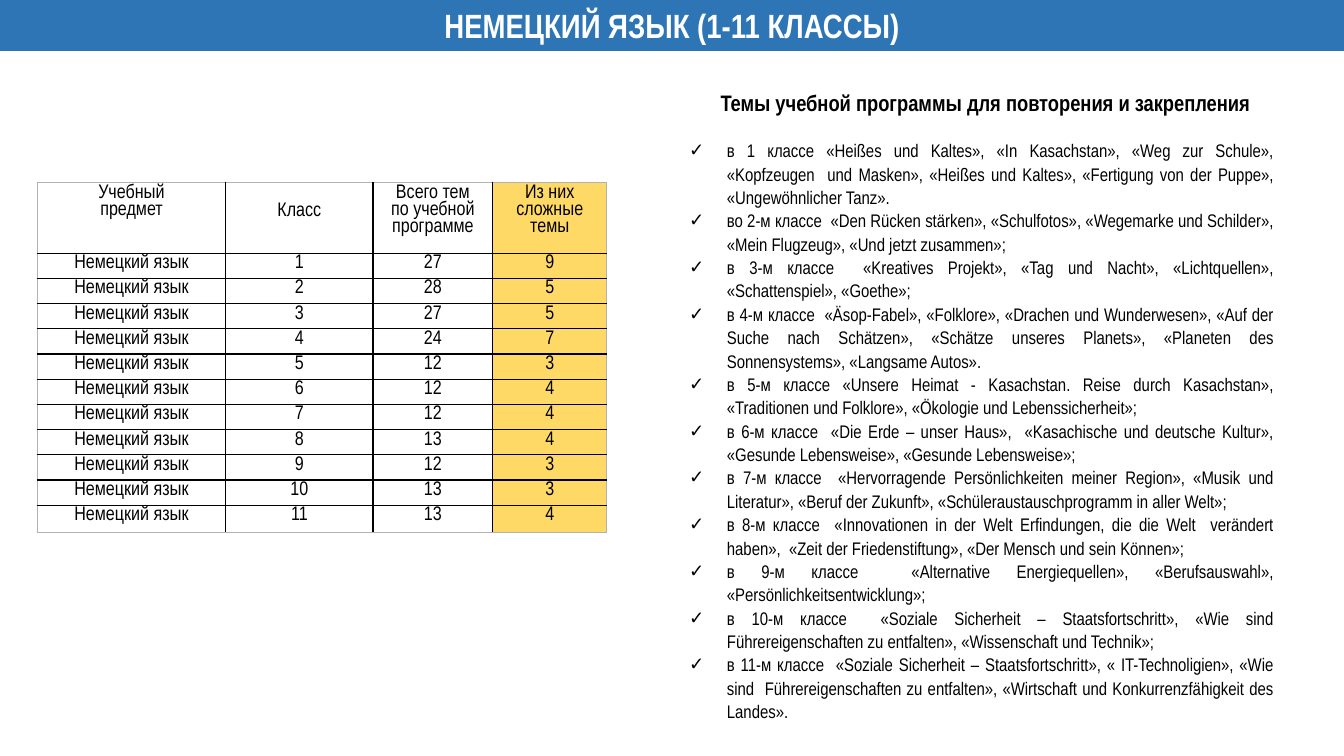
from dataclasses import dataclass

from lxml import etree
from pptx import Presentation
from pptx import util as u
from pptx.dml.color import RGBColor
from pptx.enum import text
from pptx.oxml.ns import qn


@dataclass(frozen=True)
class Theme:
    font: str = "Arial Narrow"
    blue: str = "2E75B6"
    yellow: str = "FFD966"
    white: str = "FFFFFF"
    black: str = "000000"
    grey: str = "B2B2B2"
    title_size: float = 24
    heading_size: float = 16
    table_size: float = 14
    topic_size: float = 13
    line_spacing: float = 1.07
    header_spacing: float = 0.93


TITLE = "НЕМЕЦКИЙ ЯЗЫК (1-11 КЛАССЫ)"
HEADING = "Темы учебной программы для повторения и закрепления"
TOPICS = [
    "в 1 классе «Heißes und Kaltes», «In Kasachstan», «Weg zur Schule», «Kopfzeugen  und Masken», "
    "«Heißes und Kaltes», «Fertigung von der Puppe», «Ungewöhnlicher Tanz».",
    "во 2-м классе  «Den Rücken stärken», «Schulfotos», «Wegemarke und Schilder», «Mein Flugzeug», "
    "«Und jetzt zusammen»;",
    "в 3-м классе  «Kreatives Projekt», «Tag und Nacht», «Lichtquellen», «Schattenspiel», «Goethe»;",
    "в 4-м классе  «Äsop-Fabel», «Folklore», «Drachen und Wunderwesen», «Auf der Suche nach Schätzen», "
    "«Schätze unseres Planets», «Planeten des Sonnensystems», «Langsame Autos».",
    "в 5-м классе «Unsere Heimat - Kasachstan. Reise durch Kasachstan», «Traditionen und Folklore», "
    "«Ökologie und Lebenssicherheit»;",
    "в 6-м классе  «Die Erde – unser Haus»,  «Kasachische und deutsche Kultur», «Gesunde Lebensweise», "
    "«Gesunde Lebensweise»;",
    "в 7-м классе  «Hervorragende Persönlichkeiten meiner Region», «Musik und Literatur», "
    "«Beruf der Zukunft», «Schüleraustauschprogramm in aller Welt»;",
    "в 8-м классе  «Innovationen in der Welt Erfindungen, die die Welt  verändert haben»,  "
    "«Zeit der Friedenstiftung», «Der Mensch und sein Können»;",
    "в 9-м классе  «Alternative Energiequellen», «Berufsauswahl», «Persönlichkeitsentwicklung»;",
    "в 10-м классе  «Soziale Sicherheit – Staatsfortschritt», «Wie sind Führereigenschaften zu entfalten», "
    "«Wissenschaft und Technik»;",
    "в 11-м классе  «Soziale Sicherheit – Staatsfortschritt», « IT-Technoligien», "
    "«Wie sind  Führereigenschaften zu entfalten», «Wirtschaft und Konkurrenzfähigkeit des Landes».",
]
SUBJECT = "Немецкий язык"
HEADERS = ["Учебный\nпредмет", "Класс", "Всего тем\nпо учебной программе", "Из них\nсложные темы"]
TOTAL_TOPICS = [27, 28, 27, 24, 12, 12, 12, 13, 12, 13, 13]
HARD_TOPICS = [9, 5, 5, 7, 3, 4, 4, 4, 3, 3, 4]
COLUMN_WIDTHS = [4.75, 3.71, 3.02, 2.87]
HEADER_HEIGHT, ROW_HEIGHT, LAST_ROW_HEIGHT = 1.78, 0.63, 0.69


class SlideBuilder:
    def __init__(self, presentation, theme):
        self.theme = theme
        self.slide = presentation.slides.add_slide(presentation.slide_layouts[5])

    def style(self, paragraph, size, alignment, color=None, bold=False):
        paragraph.alignment = alignment
        for run in paragraph.runs:
            run.font.name = self.theme.font
            run.font.size = u.Pt(size)
            run.font.bold = bold
            run.font.color.rgb = RGBColor.from_string(color or self.theme.black)

    def title_bar(self, caption, width, height):
        title = self.slide.shapes.title
        title.left, title.top, title.width, title.height = 0, 0, width, height
        title.fill.solid()
        title.fill.fore_color.rgb = RGBColor.from_string(self.theme.blue)
        frame = title.text_frame
        frame.text = caption
        frame.auto_size = text.MSO_AUTO_SIZE.NONE
        frame.vertical_anchor = text.MSO_ANCHOR.MIDDLE
        self.style(frame.paragraphs[0], self.theme.title_size, text.PP_ALIGN.CENTER,
                   self.theme.white, bold=True)

    def topic_list(self, heading, topics, left, top, width, height):
        frame = self.slide.shapes.add_textbox(left, top, width, height).text_frame
        frame.word_wrap = True
        frame.text = "\n".join([heading, *topics])
        first, *items = frame.paragraphs
        self.style(first, self.theme.heading_size, text.PP_ALIGN.JUSTIFY, bold=True)
        first.space_after = u.Pt(15.5)
        self.indent(first, u.Cm(0.79))
        for paragraph in items:
            self.style(paragraph, self.theme.topic_size, text.PP_ALIGN.JUSTIFY)
            paragraph.line_spacing = self.theme.line_spacing
            self.check_bullet(paragraph)

    def indent(self, paragraph, left, first_line=0):
        properties = paragraph._p.get_or_add_pPr()
        properties.set("marL", str(left))
        properties.set("indent", str(first_line))
        return properties

    def check_bullet(self, paragraph):
        properties = self.indent(paragraph, u.Cm(0.95), -u.Cm(0.95))
        etree.SubElement(properties, qn("a:buFont"), typeface="Arial")
        etree.SubElement(properties, qn("a:buChar"), char="✓")

    def table(self, rows, widths, heights, left, top):
        shape = self.slide.shapes.add_table(len(rows), len(widths), left, top,
                                            u.Cm(sum(widths)), u.Cm(sum(heights)))
        table = shape.table
        table.first_row = table.horz_banding = False
        for column, width in zip(table.columns, widths):
            column.width = u.Cm(width)
        for row, height in zip(table.rows, heights):
            row.height = u.Cm(height)
        last_row, last_column = len(rows) - 1, len(widths) - 1
        for row_index, values in enumerate(rows):
            for column_index, value in enumerate(values):
                cell = table.cell(row_index, column_index)
                self.fill_cell(cell, value, is_header=row_index == 0)
                self.borders(cell, lnL=column_index == 0, lnR=column_index == last_column,
                             lnT=row_index == 0, lnB=row_index == last_row)
                if column_index == last_column:
                    cell.fill.solid()
                    cell.fill.fore_color.rgb = RGBColor.from_string(self.theme.yellow)
                else:
                    cell.fill.background()

    def fill_cell(self, cell, value, is_header):
        cell.text = value
        cell.margin_left = cell.margin_right = u.Cm(0.1 if is_header else 0.18)
        cell.margin_top = cell.margin_bottom = 0
        if is_header:
            # A one-line header sits level with the second line of its neighbours.
            cell.margin_top = u.Cm(0.05 if "\n" in value else 0.5)
        for paragraph in cell.text_frame.paragraphs:
            self.style(paragraph, self.theme.table_size, text.PP_ALIGN.CENTER)
            paragraph.line_spacing = self.theme.header_spacing if is_header else self.theme.line_spacing

    def borders(self, cell, **outer_sides):
        """Draw inner sides black and the sides on the table's edge grey."""
        properties = cell._tc.get_or_add_tcPr()
        for side, is_outer in outer_sides.items():
            line = etree.SubElement(properties, qn(f"a:{side}"), w=str(u.Pt(1)))
            fill = etree.SubElement(line, qn("a:solidFill"))
            etree.SubElement(fill, qn("a:srgbClr"), val=self.theme.grey if is_outer else self.theme.black)


def main():
    presentation = Presentation()
    presentation.slide_width, presentation.slide_height = u.Cm(33.87), u.Cm(19.05)
    builder = SlideBuilder(presentation, Theme())
    builder.title_bar(TITLE, presentation.slide_width, u.Cm(1.28))
    builder.topic_list(HEADING, TOPICS, u.Cm(17.12), u.Cm(2.13), u.Cm(15.21), u.Cm(16.23))
    grades = [[SUBJECT, str(grade), str(total), str(hard)]
              for grade, (total, hard) in enumerate(zip(TOTAL_TOPICS, HARD_TOPICS), start=1)]
    heights = [HEADER_HEIGHT, *[ROW_HEIGHT] * (len(grades) - 1), LAST_ROW_HEIGHT]
    builder.table([HEADERS, *grades], COLUMN_WIDTHS, heights, u.Cm(0.94), u.Cm(4.6))
    presentation.save("out.pptx")


if __name__ == "__main__":
    main()
